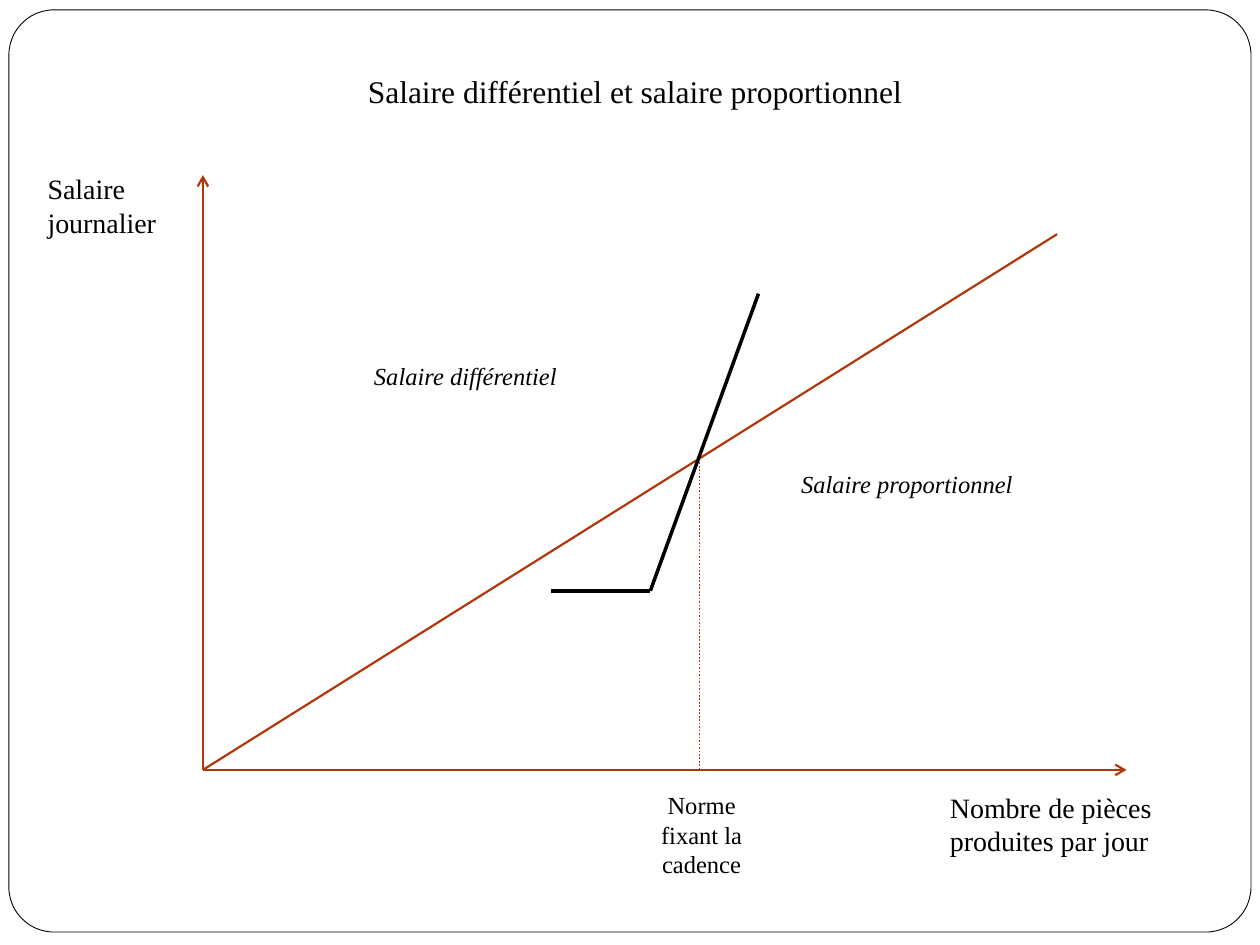
"""Build a slide that compares differential and proportional wages."""
from lxml.etree import SubElement
from pptx import Presentation
from pptx.dml.color import RGBColor
from pptx.enum.dml import MSO_LINE
from pptx.enum.shapes import MSO_CONNECTOR, MSO_SHAPE
from pptx.enum.text import MSO_ANCHOR, MSO_AUTO_SIZE, PP_ALIGN
from pptx.oxml.ns import qn
from pptx.util import Cm, Pt

COLORS = {"axis": "B1360B", "ink": "000000"}
FONT = "Times New Roman"


def write(sp, text, size, align=PP_ALIGN.LEFT, italic=False):
    tf = sp.text_frame
    tf.word_wrap = True
    tf.auto_size = MSO_AUTO_SIZE.NONE
    tf.vertical_anchor = MSO_ANCHOR.TOP
    tf.margin_left = tf.margin_right = Cm(0.25)
    tf.margin_top = tf.margin_bottom = Cm(0.13)
    p = tf.paragraphs[0]
    p.alignment = align
    r = p.add_run()
    r.text = text
    r.font.name = FONT
    r.font.size = Pt(size)
    r.font.italic = italic
    r.font.color.rgb = RGBColor.from_string(COLORS["ink"])


prs = Presentation()
prs.slide_width, prs.slide_height = Cm(25.4), Cm(19.05)
s = prs.slides.add_slide(prs.slide_layouts[5])

title = s.shapes.title
title.left, title.top, title.width, title.height = Cm(2.9), Cm(1.32), Cm(19.81), Cm(1.02)
write(title, "Salaire différentiel et salaire proportionnel", 18, PP_ALIGN.CENTER)

frame = s.shapes.add_shape(MSO_SHAPE.ROUNDED_RECTANGLE, Cm(0.18), Cm(0.2), Cm(25.04), Cm(18.59))
frame.adjustments[0] = 0.049
frame.shadow.inherit = False
frame.fill.background()
frame.line.color.rgb = RGBColor.from_string(COLORS["ink"])
frame.line.width = Pt(0.5)

origin = (4.09, 15.52)
norm = (14.1, 9.32)
bend = (13.11, 11.91)
lines = [
    (origin, (22.71, origin[1]), "axis", 1.25, None, True),
    (origin, (origin[0], 3.53), "axis", 1.25, None, True),
    (origin, (21.31, 4.72), "axis", 1.25, None, False),
    (norm, (norm[0], origin[1]), "axis", 1, MSO_LINE.ROUND_DOT, False),
    ((11.1, bend[1]), bend, "ink", 2, None, False),
    (bend, (15.29, 5.92), "ink", 2, None, False),
]
for start, end, color, width, dash, arrow in lines:
    line = s.shapes.add_connector(MSO_CONNECTOR.STRAIGHT, *map(Cm, start + end))
    line.line.color.rgb = RGBColor.from_string(COLORS[color])
    line.line.width = Pt(width)
    if dash:
        line.line.dash_style = dash
    if arrow:
        SubElement(line.line._get_or_add_ln(), qn("a:tailEnd"), type="arrow")
    SubElement(line._element.spPr, qn("a:effectLst"))

labels = [
    ("Salaire journalier", 0.71, 3.33, 3, 1.63, 16, PP_ALIGN.LEFT, False),
    ("Nombre de pièces produites par jour", 18.9, 15.8, 4.8, 1.63, 16, PP_ALIGN.LEFT, False),
    ("Norme fixant la cadence", 12.8, 15.8, 2.69, 2.06, 14, PP_ALIGN.CENTER, False),
    ("Salaire proportionnel", 15.9, 9.32, 5.41, 0.86, 14, PP_ALIGN.LEFT, True),
    ("Salaire différentiel", 7.29, 7.14, 5.41, 0.86, 14, PP_ALIGN.LEFT, True),
]
for text, left, top, width, height, size, align, italic in labels:
    sp = s.shapes.add_textbox(Cm(left), Cm(top), Cm(width), Cm(height))
    write(sp, text, size, align, italic)

prs.save("out.pptx")
